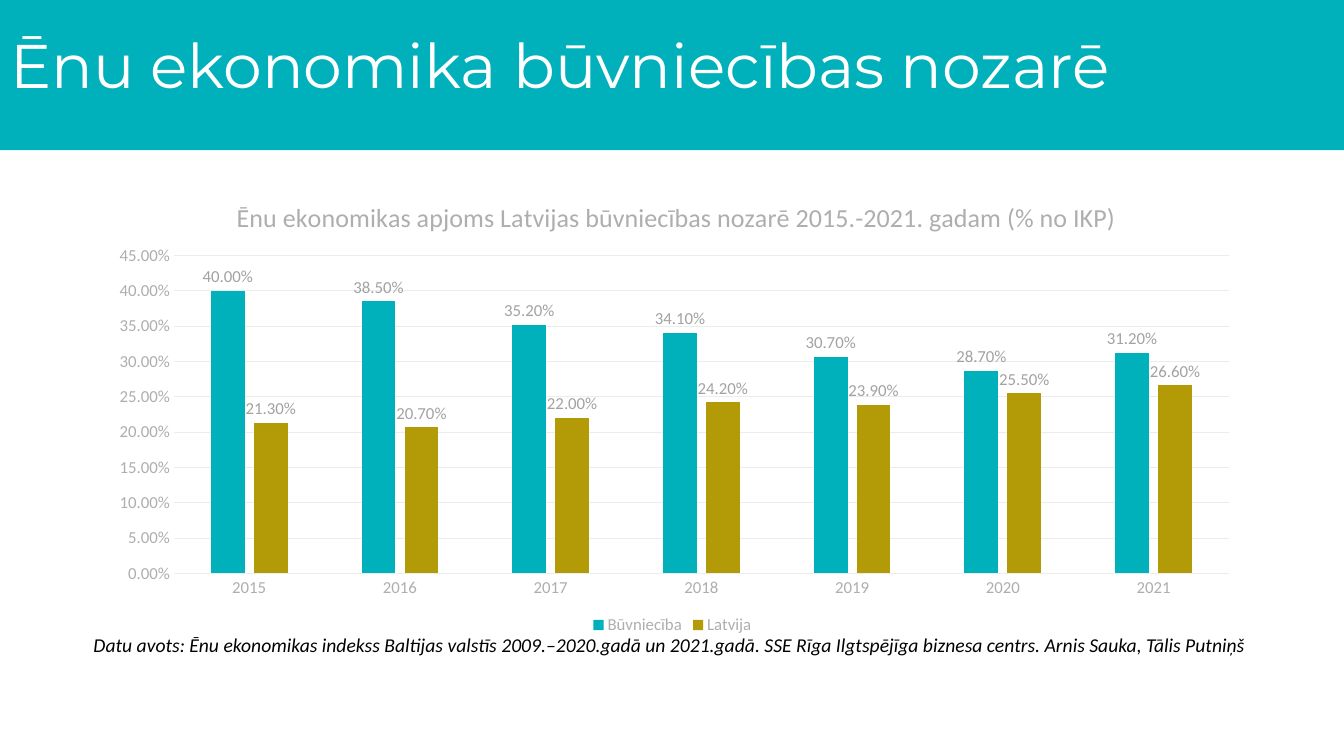
from pptx import Presentation
from pptx.chart.data import CategoryChartData
from pptx.dml.color import RGBColor
from pptx.enum.chart import XL_CHART_TYPE as ChartType
from pptx.enum.chart import XL_LABEL_POSITION as LabelPosition
from pptx.enum.chart import XL_LEGEND_POSITION as LegendPosition
from pptx.enum.chart import XL_TICK_MARK as TickMark
from pptx.enum.shapes import MSO_SHAPE as Shape
from pptx.enum.text import MSO_ANCHOR as Anchor
from pptx.enum.text import PP_ALIGN as Align
from pptx.oxml import parse_xml
from pptx.oxml.ns import nsdecls, qn
from pptx.util import Pt

PX = 9144
TEAL, OLIVE, WHITE, BLACK = "00B0BA", "B29B07", "FFFFFF", "000000"
AXIS_GREY, LABEL_GREY, GRID_GREY = "AEAEB0", "A2A2A4", "ECECED"
YEARS = [str(year) for year in range(2015, 2022)]
SERIES = [
    ("Būvniecība", TEAL, [0.4, 0.385, 0.352, 0.341, 0.307, 0.287, 0.312]),
    ("Latvija", OLIVE, [0.213, 0.207, 0.22, 0.242, 0.239, 0.255, 0.266]),
]


def px(*lengths):
    return [length * PX for length in lengths]


def color(hex_code):
    return RGBColor.from_string(hex_code)


def style_font(font, size, hex_code, face="Calibri", bold=False, italic=False):
    font.size = Pt(size)
    font.name = face
    font.bold = bold
    font.italic = italic
    font.color.rgb = color(hex_code)


def write_text(frame, text, size, hex_code, face="Calibri", align=Align.LEFT,
               anchor=Anchor.TOP, spacing=1.0, italic=False):
    frame.word_wrap = True
    frame.vertical_anchor = anchor
    paragraph = frame.paragraphs[0]
    paragraph.alignment = align
    paragraph.line_spacing = spacing
    run = paragraph.add_run()
    run.text = text
    style_font(run.font, size, hex_code, face, italic=italic)


def add_heading(slide, text):
    band = slide.shapes.add_shape(Shape.RECTANGLE, *px(0, -2, 1333, 151))
    band.shadow.inherit = False
    band.fill.solid()
    band.fill.fore_color.rgb = color(TEAL)
    band.line.fill.background()
    slide.shapes.element.insert(2, band.element)

    heading = slide.shapes.title
    heading.left, heading.top, heading.width, heading.height = px(0, -4, 1150, 145)
    write_text(heading.text_frame, text, 44, WHITE, face="Montserrat",
               anchor=Anchor.MIDDLE, spacing=0.9)


def set_layout(part, index, target="", **fractions):
    for old in part.findall(qn("c:layout")):
        part.remove(old)
    inner = f'<c:layoutTarget val="{target}"/>' if target else ""
    modes = '<c:xMode val="edge"/><c:yMode val="edge"/>'
    sizes = "".join(f'<c:{key} val="{value}"/>' for key, value in fractions.items())
    part.insert(index, parse_xml(
        f'<c:layout {nsdecls("c")}><c:manualLayout>{inner}{modes}{sizes}'
        "</c:manualLayout></c:layout>"))


def style_axis(axis):
    axis.major_tick_mark = axis.minor_tick_mark = TickMark.NONE
    style_font(axis.tick_labels.font, 12, AXIS_GREY)


def style_line(line):
    line.color.rgb = color(GRID_GREY)
    line.width = Pt(0.75)


def style_series(series, hex_code):
    series.invert_if_negative = False
    series.format.fill.solid()
    series.format.fill.fore_color.rgb = color(hex_code)
    labels = series.data_labels
    labels.show_value = True
    labels.position = LabelPosition.OUTSIDE_END
    labels.number_format = "0.00%"
    labels.number_format_is_linked = False
    style_font(labels.font, 12, LABEL_GREY)


def add_share_chart(slide, title):
    data = CategoryChartData(number_format="0.00%")
    data.categories = YEARS
    for name, _, shares in SERIES:
        data.add_series(name, shares)
    chart = slide.shapes.add_chart(
        ChartType.COLUMN_CLUSTERED, *px(92, 170, 1150, 464), data).chart
    style_font(chart.font, 10, "838386")

    chart.has_title = True
    write_text(chart.chart_title.text_frame, title, 18.6, AXIS_GREY, align=Align.CENTER)
    chart_part = chart.element.find(qn("c:chart"))
    set_layout(chart_part.find(qn("c:title")), 1, x=0.12, y=0.05)
    set_layout(chart_part.find(qn("c:plotArea")), 0, "inner", x=0.07, y=0.18, w=0.91, h=0.68)

    chart.has_legend = True
    chart.legend.position = LegendPosition.BOTTOM
    chart.legend.include_in_layout = False
    style_font(chart.legend.font, 12, AXIS_GREY)

    years, shares = chart.category_axis, chart.value_axis
    style_axis(years)
    style_line(years.format.line)
    style_axis(shares)
    shares.format.line.fill.background()
    style_line(shares.major_gridlines.format.line)
    shares.minimum_scale, shares.maximum_scale, shares.major_unit = 0, 0.45, 0.05
    shares.tick_labels.number_format = "0.00%"
    shares.tick_labels.number_format_is_linked = False

    columns = chart.plots[0]
    columns.vary_by_categories = False
    columns.gap_width, columns.overlap = 219, -27
    for series, (_, hex_code, _) in zip(columns.series, SERIES):
        style_series(series, hex_code)


def add_data_source(slide, text):
    data_source = slide.shapes.add_textbox(*px(60, 623, 1186, 34))
    write_text(data_source.text_frame, text, 14, BLACK, align=Align.RIGHT, italic=True)


def main():
    deck = Presentation()
    deck.slide_width, deck.slide_height = px(1333, 750)
    slide = deck.slides.add_slide(deck.slide_layouts[5])
    add_heading(slide, "Ēnu ekonomika būvniecības nozarē")
    add_share_chart(
        slide, "Ēnu ekonomikas apjoms Latvijas būvniecības nozarē 2015.-2021. gadam (% no IKP)")
    add_data_source(
        slide,
        "Datu avots: Ēnu ekonomikas indekss Baltijas valstīs 2009.–2020.gadā un 2021.gadā. "
        "SSE Rīga Ilgtspējīga biznesa centrs. Arnis Sauka, Tālis Putniņš")
    deck.save("out.pptx")


if __name__ == "__main__":
    main()
